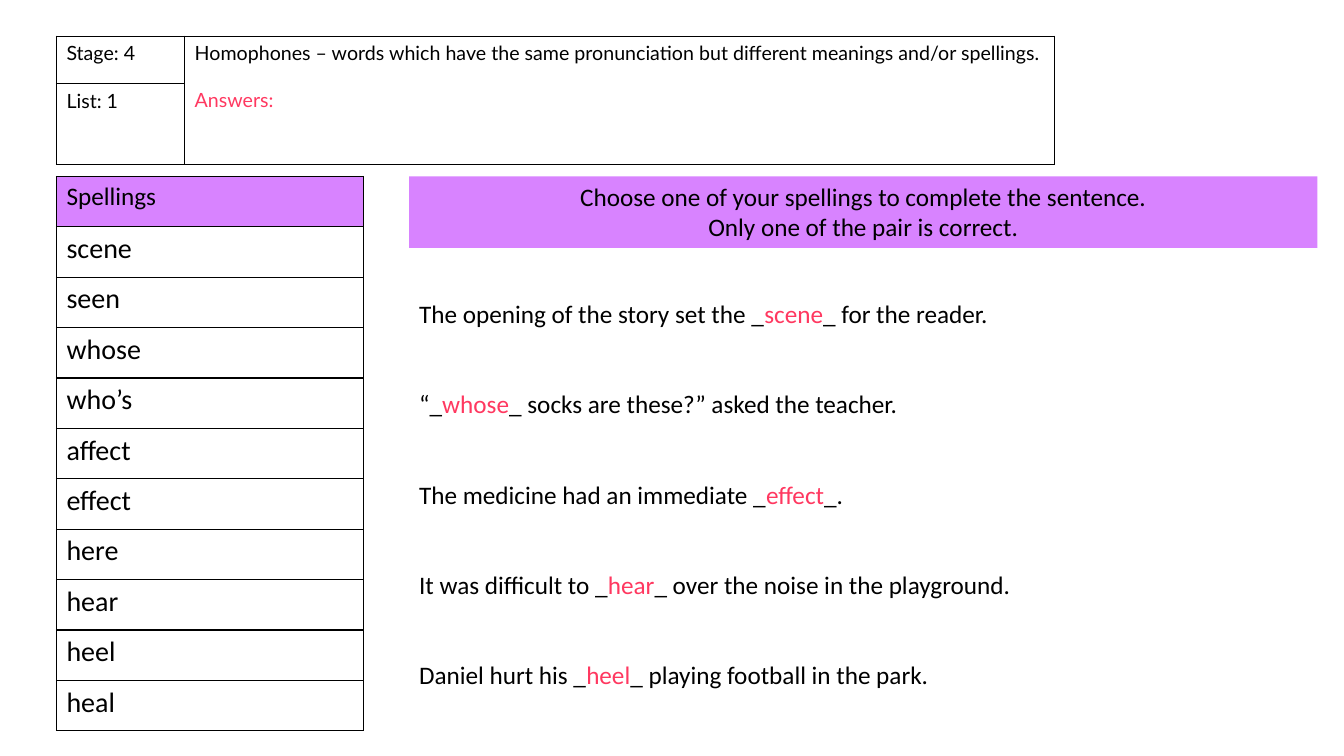
from lxml import etree
from pptx import Presentation
from pptx.dml.color import RGBColor
from pptx.enum import shapes, text
from pptx.oxml import ns
from pptx.util import Pt

STAGE = "Stage: 4"
LIST = "List: 1"
RULE = "Homophones – words which have the same pronunciation but different meanings and/or spellings."
ANSWERS = "Answers:"
SPELLINGS = ["scene", "seen", "whose", "who’s", "affect", "effect", "here", "hear", "heel", "heal"]
INSTRUCTIONS = ["Choose one of your spellings to complete the sentence.", "Only one of the pair is correct."]
SENTENCES = [
    ("The opening of the story set the _", "scene", "_ for the reader."),
    ("“_", "whose", "_ socks are these?” asked the teacher."),
    ("The medicine had an immediate _", "effect", "_."),
    ("It was difficult to _", "hear", "_ over the noise in the playground."),
    ("Daniel hurt his _", "heel", "_ playing football in the park."),
]

BLACK = RGBColor(0x00, 0x00, 0x00)
PINK = RGBColor(0xFF, 0x38, 0x60)
PURPLE = RGBColor(0xD8, 0x83, 0xFF)

LEFT, HEADER_TOP, BODY_TOP = 40.3, 25.9, 126
RIGHT_LEFT = 292.3


def style(span, size, color=BLACK, font="Calibri"):
    span.font.size = Pt(size)
    span.font.name = font
    span.font.color.rgb = color


def write(frame, lines, size, font="Calibri", gap=0, align=None):
    for index, line in enumerate(lines):
        para = frame.paragraphs[0] if index == 0 else frame.add_paragraph()
        para.alignment = align
        if index and gap:
            para.space_before = Pt(gap)
        for words, color in line:
            span = para.add_run()
            span.text = words
            style(span, size, color, font)


def add_grid(page, left, top, widths, heights):
    frame = page.shapes.add_table(len(heights), len(widths), Pt(left), Pt(top),
                                  Pt(sum(widths)), Pt(sum(heights)))
    grid = frame.table
    grid.first_row = grid.horz_banding = False
    for column, width in zip(grid.columns, widths):
        column.width = Pt(width)
    for row, height in zip(grid.rows, heights):
        row.height = Pt(height)
        for cell in row.cells:
            properties = cell._tc.get_or_add_tcPr()
            for side in ("a:lnL", "a:lnR", "a:lnT", "a:lnB"):
                border = etree.SubElement(properties, ns.qn(side), w=str(Pt(1)))
                fill = etree.SubElement(border, ns.qn("a:solidFill"))
                etree.SubElement(fill, ns.qn("a:srgbClr"), val=str(BLACK))
            cell.fill.background()
    return grid


def add_header(page):
    grid = add_grid(page, LEFT, HEADER_TOP, [91.6, 621.4], [33.9, 57.6])
    grid.cell(0, 1).merge(grid.cell(1, 1))
    write(grid.cell(0, 0).text_frame, [[(STAGE, BLACK)]], 14, "Lato")
    write(grid.cell(1, 0).text_frame, [[(LIST, BLACK)]], 14, "Lato")
    write(grid.cell(0, 1).text_frame, [[(RULE, BLACK)], [(ANSWERS, PINK)]], 14, "Lato", gap=16.8)


def add_spellings(page):
    words = ["Spellings"] + SPELLINGS
    grid = add_grid(page, LEFT, BODY_TOP, [219.6], [36] * len(words))
    for index, word in enumerate(words):
        write(grid.cell(index, 0).text_frame, [[(word, BLACK)]], 20 if index else 18)
    heading = grid.cell(0, 0)
    heading.fill.solid()
    heading.fill.fore_color.rgb = PURPLE


def add_sentences(page):
    box = page.shapes.add_textbox(Pt(RIGHT_LEFT), Pt(209.5), Pt(667.4), Pt(312.5))
    box.text_frame.word_wrap = True
    lines = [[(before, BLACK), (answer, PINK), (after, BLACK)] for before, answer, after in SENTENCES]
    write(box.text_frame, lines, 18, gap=42.9)


def add_banner(page):
    banner = page.shapes.add_shape(shapes.MSO_SHAPE.RECTANGLE, Pt(RIGHT_LEFT), Pt(BODY_TOP),
                                   Pt(648.7), Pt(51))
    banner.shadow.inherit = False
    banner.fill.solid()
    banner.fill.fore_color.rgb = PURPLE
    banner.line.fill.background()
    banner.text_frame.word_wrap = True
    banner.text_frame.vertical_anchor = text.MSO_ANCHOR.TOP
    write(banner.text_frame, [[(line, BLACK)] for line in INSTRUCTIONS], 18,
          align=text.PP_ALIGN.CENTER)


def main():
    deck = Presentation()
    deck.slide_width, deck.slide_height = Pt(960), Pt(540)
    page = deck.slides.add_slide(deck.slide_layouts[6])
    add_spellings(page)
    add_header(page)
    add_sentences(page)
    add_banner(page)
    deck.save("out.pptx")


if __name__ == "__main__":
    main()
